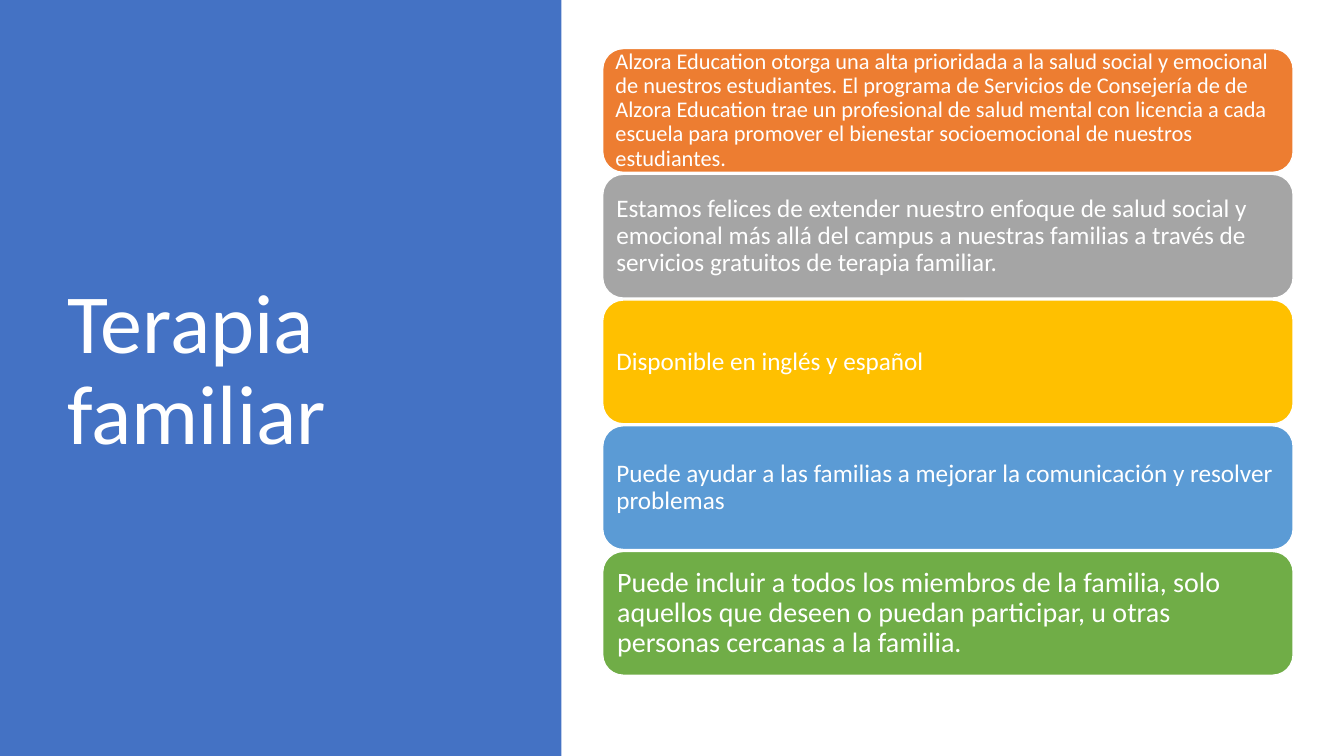
from pptx import Presentation
from pptx.dml.color import RGBColor
from pptx.enum.shapes import MSO_SHAPE
from pptx.enum.text import MSO_ANCHOR, MSO_AUTO_SIZE, PP_ALIGN
from pptx.util import Pt

COLORS = {
    "white": "FFFFFF",
    "panel": "4472C4",
    "orange": "ED7D31",
    "gray": "A5A5A5",
    "gold": "FFC000",
    "blue": "5B9BD5",
    "green": "70AD47",
}
FONT = "Calibri"
CARD_LEFT, CARD_TOP = 430.5, 34.7
CARD_WIDTH, CARD_HEIGHT, CARD_PITCH = 493.2, 88.4, 89.8
INSET_PER_POINT = 0.3

CARDS = [
    ("orange", 16, "Alzora Education otorga una alta prioridada a la salud social y emocional "
     "de nuestros estudiantes. El programa de Servicios de Consejería de de Alzora Education "
     "trae un profesional de salud mental con licencia a cada escuela para promover el "
     "bienestar socioemocional de nuestros estudiantes."),
    ("gray", 18, "Estamos felices de extender nuestro enfoque de salud social y emocional más "
     "allá del campus a nuestras familias a través de servicios gratuitos de terapia familiar."),
    ("gold", 18, "Disponible en inglés y español"),
    ("blue", 18, "Puede ayudar a las familias a mejorar la comunicación y resolver problemas"),
    ("green", 20, "Puede incluir a todos los miembros de la familia, solo aquellos que deseen o "
     "puedan participar, u otras personas cercanas a la familia."),
]


def color(name):
    return RGBColor.from_string(COLORS[name])


def write_text(shape, text, size):
    frame = shape.text_frame
    frame.text = text
    frame.word_wrap = True
    frame.auto_size = MSO_AUTO_SIZE.NONE
    frame.vertical_anchor = MSO_ANCHOR.MIDDLE
    paragraph = frame.paragraphs[0]
    paragraph.alignment = PP_ALIGN.LEFT
    paragraph.line_spacing = 0.9
    paragraph.font.name = FONT
    paragraph.font.size = Pt(size)
    paragraph.font.color.rgb = color("white")
    return frame


def add_block(slide, kind, left, top, width, height, fill):
    shape = slide.shapes.add_shape(kind, Pt(left), Pt(top), Pt(width), Pt(height))
    shape.shadow.inherit = False
    shape.fill.solid()
    shape.fill.fore_color.rgb = color(fill)
    shape.line.fill.background()
    return shape


def add_title(slide, text):
    title = slide.shapes.title
    title.left, title.top, title.width, title.height = Pt(41), Pt(49), Pt(299.5), Pt(433.4)
    write_text(title, text, 60)
    return title


def add_card(slide, row, fill, size, text):
    card = add_block(slide, MSO_SHAPE.ROUNDED_RECTANGLE, CARD_LEFT,
                     CARD_TOP + row * CARD_PITCH, CARD_WIDTH, CARD_HEIGHT, fill)
    card.line.color.rgb = color("white")
    card.line.width = Pt(1)
    frame = write_text(card, text, size)
    inset = Pt(size * INSET_PER_POINT)
    frame.margin_left = frame.margin_right = inset
    frame.margin_top = frame.margin_bottom = inset


def main():
    presentation = Presentation()
    presentation.slide_width, presentation.slide_height = Pt(960), Pt(540)
    slide = presentation.slides.add_slide(presentation.slide_layouts[5])
    title = add_title(slide, "Terapia familiar")
    panel = add_block(slide, MSO_SHAPE.RECTANGLE, 0, 0, 401, 540, "panel")
    title.element.addprevious(panel.element)
    for row, (fill, size, text) in enumerate(CARDS):
        add_card(slide, row, fill, size, text)
    presentation.save("out.pptx")


if __name__ == "__main__":
    main()
